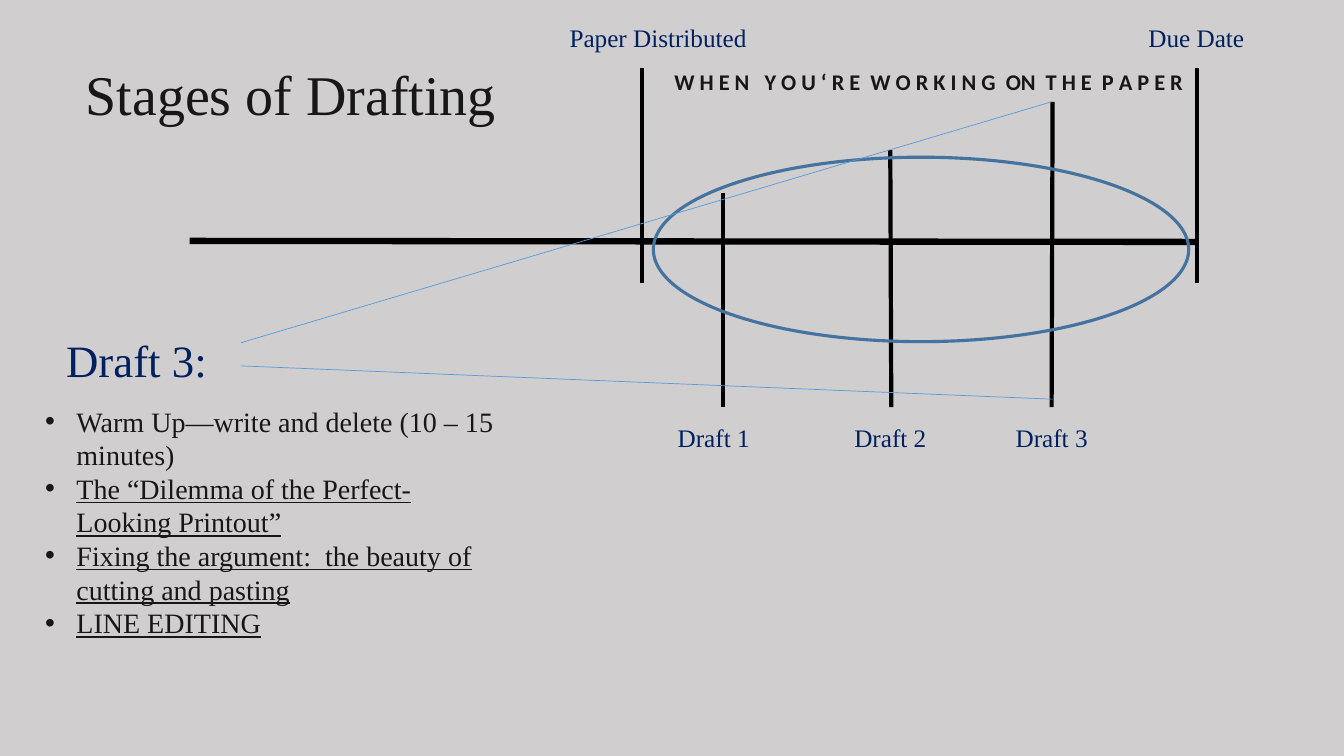
from lxml import etree
from pptx import Presentation
from pptx.dml.color import RGBColor
from pptx.enum.shapes import MSO_CONNECTOR, MSO_SHAPE
from pptx.enum.text import PP_ALIGN
from pptx.oxml.ns import qn
from pptx.util import Pt

LEFT, CENTER = PP_ALIGN.LEFT, PP_ALIGN.CENTER
STRAIGHT, OVAL = MSO_CONNECTOR.STRAIGHT, MSO_SHAPE.OVAL
PX = 9144  # 100 px to the inch
SERIF, SANS = "Times New Roman", "Calibri"
COLORS = {"background": "D0CECE", "ink": "181717", "navy": "002060",
          "axis": "000000", "oval": "43739E", "pointer": "5B9BD5"}

# text, box, size, colour, alignment
LABELS = [
    ("Stages of Drafting", (75, 54, 452, 205), 40, "ink", LEFT),
    ("Paper Distributed", (555, 17, 202, 40), 18, "navy", LEFT),
    ("Due Date", (1125, 17, 123, 40), 18, "navy", CENTER),
    ("Draft 1 ", (640, 414, 142, 40), 18, "navy", CENTER),
    ("Draft 2", (812, 414, 142, 40), 18, "navy", CENTER),
    ("Draft 3", (972, 414, 142, 40), 18, "navy", CENTER),
    ("Draft 3: ", (43, 325, 196, 64), 32, "navy", CENTER),
]
WORKING_PERIOD = "W H E N   Y O U ‘ R E  W O R K I N G  ON  T H E  P A P E R"
WORKING_BOX = (659, 63, 535, 37)
OVAL_BOX = (648, 156, 531, 183)

# text, underlined
STEPS = [
    ("Warm Up—write and delete (10 – 15 minutes)", False),
    ("The “Dilemma of the Perfect-Looking Printout”", True),
    ("Fixing the argument:  the beauty of cutting and pasting", True),
    ("LINE EDITING", True),
]
STEPS_BOX = (35, 396, 471, 313)
STEP_INDENT = 31

TIMELINE = (188, 239, 1187, 240)
DATE_X = (637, 1187)
DATE_TOP, DATE_BOTTOM = 67, 281
DRAFT_TOPS = [(717, 191, 717), (883, 149, 884), (1044, 101, 1043)]  # x, y, foot x
DRAFT_BOTTOM = 404
POINTERS = [(1043, 101, 239, 340), (1044, 396, 239, 363)]


def color(name):
    return RGBColor.from_string(COLORS[name])


def emu(lengths):
    return [length * PX for length in lengths]


def add_line(ends, width, color_name):
    line = slide.shapes.add_connector(STRAIGHT, *emu(ends))
    line.line.width = Pt(width)
    line.line.color.rgb = color(color_name)
    etree.SubElement(line._element.spPr, qn("a:effectLst"))


def add_text_frame(box):
    frame = slide.shapes.add_textbox(*emu(box)).text_frame
    frame.word_wrap = True
    return frame


def add_run(paragraph, text, size, color_name, face=SERIF):
    run = paragraph.add_run()
    run.text = text
    run.font.size = Pt(size)
    run.font.name = face
    run.font.color.rgb = color(color_name)
    return run


def add_bullet(paragraph):
    properties = paragraph._p.get_or_add_pPr()
    properties.set("marL", str(STEP_INDENT * PX))
    properties.set("indent", str(-STEP_INDENT * PX))
    etree.SubElement(properties, qn("a:buFont")).set("typeface", "Arial")
    etree.SubElement(properties, qn("a:buChar")).set("char", "•")


deck = Presentation()
deck.slide_width, deck.slide_height = emu((1333, 750))
slide = deck.slides.add_slide(deck.slide_layouts[6])
slide.background.fill.solid()
slide.background.fill.fore_color.rgb = color("background")

add_line(TIMELINE, 4.5, "axis")
for x in DATE_X:
    add_line((x, DATE_TOP, x, DATE_BOTTOM), 3, "axis")
for x, top, foot_x in DRAFT_TOPS:
    add_line((x, top, foot_x, DRAFT_BOTTOM), 3, "axis")

for text, box, size, color_name, alignment in LABELS:
    paragraph = add_text_frame(box).paragraphs[0]
    paragraph.alignment = alignment
    add_run(paragraph, text, size, color_name)

working = add_text_frame(WORKING_BOX).paragraphs[0]
add_run(working, WORKING_PERIOD, 16, "ink", SANS).font.bold = True

working_oval = slide.shapes.add_shape(OVAL, *emu(OVAL_BOX))
working_oval.shadow.inherit = False
working_oval.fill.background()
working_oval.line.width = Pt(2.25)
working_oval.line.color.rgb = color("oval")

for ends in POINTERS:
    add_line(ends, 0.5, "pointer")

steps = add_text_frame(STEPS_BOX)
for number, (text, underlined) in enumerate(STEPS):
    step = steps.add_paragraph() if number else steps.paragraphs[0]
    step.line_spacing = Pt(24)
    add_bullet(step)
    add_run(step, text, 20, "ink").font.underline = underlined

deck.save("out.pptx")
